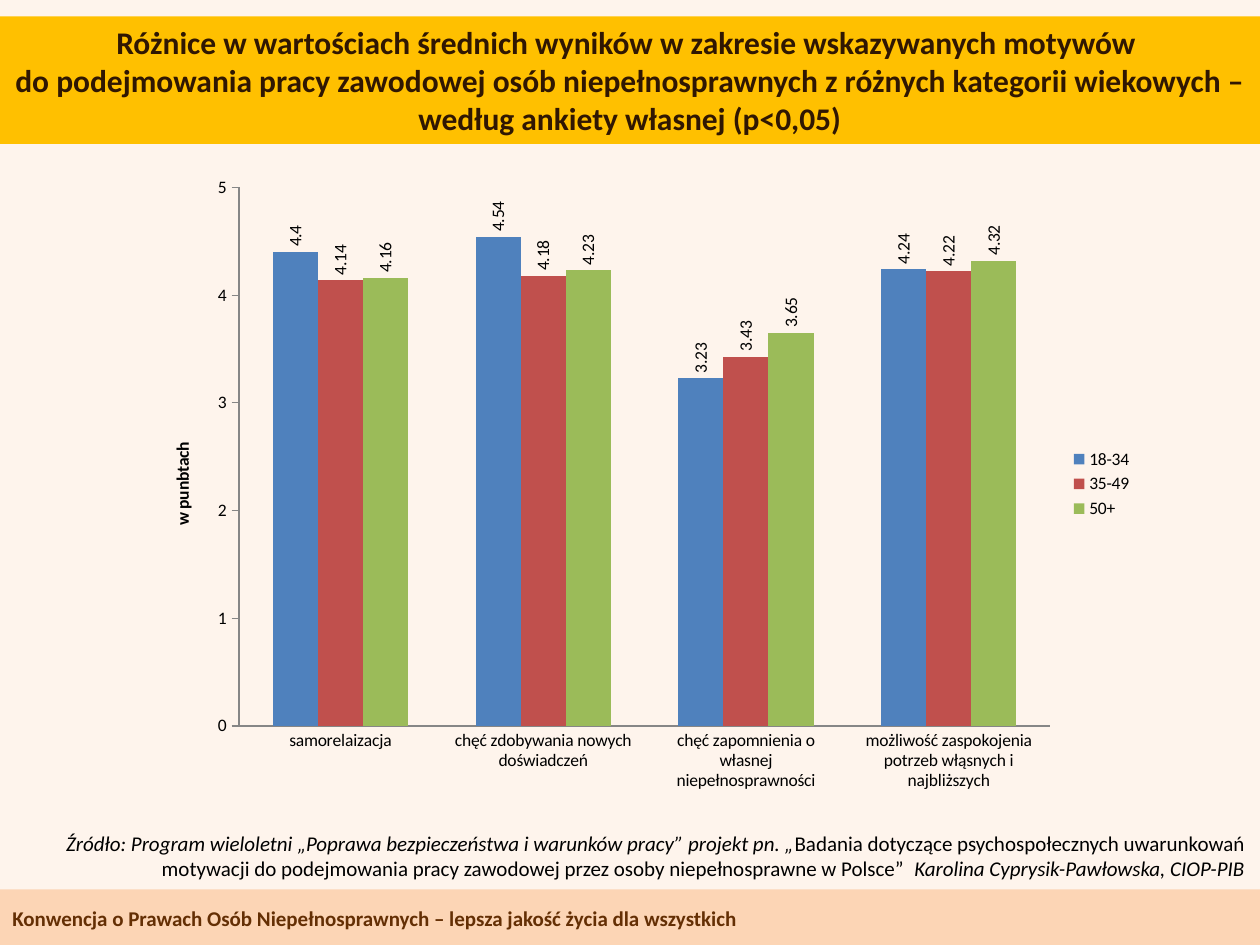
from lxml import etree
from pptx import Presentation
from pptx.chart.data import CategoryChartData
from pptx.dml.color import RGBColor
from pptx.enum.chart import XL_CHART_TYPE as ChartType
from pptx.enum.chart import XL_LABEL_POSITION as LabelPosition
from pptx.enum.chart import XL_LEGEND_POSITION as LegendPosition
from pptx.enum.chart import XL_TICK_MARK as TickMark
from pptx.enum.shapes import MSO_SHAPE as Shape
from pptx.enum.text import MSO_ANCHOR as Anchor
from pptx.enum.text import PP_ALIGN as Align
from pptx.oxml.ns import qn
from pptx.util import Cm, Pt

FONT = "Calibri"
SLIDE_WIDTH = 25.4
COLORS = {
    "background": "FEF4EC",
    "title_band": "FFC000",
    "title_text": "301702",
    "footer_band": "FCD5B5",
    "footer_text": "642F04",
    "text": "000000",
    "axis": "868686",
}

TITLE = (
    "Różnice w wartościach średnich wyników w zakresie wskazywanych motywów \v"
    "do podejmowania pracy zawodowej osób niepełnosprawnych z różnych kategorii "
    "wiekowych – według ankiety własnej (p<0,05)"
)
FOOTER = "Konwencja o Prawach Osób Niepełnosprawnych – lepsza jakość życia dla wszystkich"
SOURCE = [  # text, italic
    ("Źródło: Program wieloletni „Poprawa bezpieczeństwa i warunków pracy” projekt pn. „", True),
    ("Badania dotyczące psychospołecznych uwarunkowań motywacji do podejmowania pracy "
     "zawodowej przez osoby niepełnosprawne w Polsce”", False),
    ("  Karolina Cyprysik-Pawłowska, CIOP-PIB", True),
]
MOTIVES = [
    "samorelaizacja",
    "chęć zdobywania nowych doświadczeń",
    "chęć zapomnienia o własnej niepełnosprawności",
    "możliwość zaspokojenia potrzeb włąsnych i najbliższych",
]
AGE_GROUPS = [  # name, colour, mean scores
    ("18-34", "4F81BD", (4.4, 4.54, 3.23, 4.24)),
    ("35-49", "C0504D", (4.14, 4.18, 3.43, 4.22)),
    ("50+", "9BBB59", (4.16, 4.23, 3.65, 4.32)),
]
PLOT_AREA = {"x": 0.095, "y": 0.035, "w": 0.81, "h": 0.845}


def rgb(name):
    return RGBColor.from_string(COLORS[name])


def set_font(font, size, color, bold=False):
    font.name = FONT
    font.size = Pt(size)
    font.bold = bold
    font.color.rgb = rgb(color)


def add_band(slide, top, height, color):
    band = slide.shapes.add_shape(
        Shape.RECTANGLE, 0, Cm(top), Cm(SLIDE_WIDTH), Cm(height))
    band.shadow.inherit = False
    band.fill.solid()
    band.fill.fore_color.rgb = rgb(color)
    band.line.fill.background()
    return band


def add_text_box(slide, top, width, height):
    box = slide.shapes.add_textbox(0, Cm(top), Cm(width), Cm(height))
    box.text_frame.word_wrap = True
    box.text_frame.vertical_anchor = Anchor.MIDDLE
    return box


def add_title(slide):
    frame = add_band(slide, 0.33, 2.57, "title_band").text_frame
    frame.word_wrap = True
    paragraph = frame.paragraphs[0]
    paragraph.text = TITLE
    paragraph.alignment = Align.CENTER
    set_font(paragraph.font, 18, "title_text", bold=True)


def add_footer(slide):
    add_band(slide, 17.93, 1.12, "footer_band")
    paragraph = add_text_box(slide, 18.11, SLIDE_WIDTH, 0.79).text_frame.paragraphs[0]
    paragraph.text = FOOTER
    set_font(paragraph.font, 12, "footer_text", bold=True)


def add_source(slide):
    paragraph = add_text_box(slide, 16.61, 25.35, 1.27).text_frame.paragraphs[0]
    paragraph.alignment = Align.RIGHT
    for text, italic in SOURCE:
        run = paragraph.add_run()
        run.text = text
        run.font.italic = italic
    set_font(paragraph.font, 12, "text")


def place_plot_area(chart):
    plot_area = chart.element.chart.plotArea
    for old_layout in plot_area.findall(qn("c:layout")):
        plot_area.remove(old_layout)
    layout = etree.Element(qn("c:layout"))
    manual = etree.SubElement(layout, qn("c:manualLayout"))
    settings = {"layoutTarget": "inner", "xMode": "edge", "yMode": "edge", **PLOT_AREA}
    for tag, value in settings.items():
        etree.SubElement(manual, qn(f"c:{tag}"), val=str(value))
    plot_area.insert(0, layout)


def format_axes(chart):
    for axis in (chart.category_axis, chart.value_axis):
        axis.has_major_gridlines = False
        axis.format.line.color.rgb = rgb("axis")
    chart.category_axis.major_tick_mark = TickMark.NONE

    value_axis = chart.value_axis
    value_axis.minimum_scale = 0
    value_axis.maximum_scale = 5
    value_axis.major_unit = 1
    value_axis.major_tick_mark = TickMark.OUTSIDE
    paragraph = value_axis.axis_title.text_frame.paragraphs[0]
    paragraph.text = "w punbtach"
    set_font(paragraph.font, 10, "text", bold=True)


def format_series(series, color):
    series.format.fill.solid()
    series.format.fill.fore_color.rgb = RGBColor.from_string(color)
    labels = series.data_labels
    labels.show_value = True
    labels.position = LabelPosition.OUTSIDE_END
    set_font(labels.font, 10, "text")
    # Turn the labels to read upwards
    body = labels._element.find(qn("c:txPr")).find(qn("a:bodyPr"))
    body.set("rot", "-5400000")
    body.set("vert", "horz")


def add_motives_chart(slide):
    data = CategoryChartData()
    data.categories = MOTIVES
    for name, _, scores in AGE_GROUPS:
        data.add_series(name, scores)
    chart = slide.shapes.add_chart(
        ChartType.COLUMN_CLUSTERED, Cm(2.9), Cm(3.33), Cm(20.19), Cm(12.85), data).chart
    chart.has_title = False
    set_font(chart.font, 10, "text")
    chart.has_legend = True
    chart.legend.position = LegendPosition.RIGHT
    chart.legend.include_in_layout = False

    plot = chart.plots[0]
    plot.gap_width = 150
    plot.overlap = 0
    plot.vary_by_categories = False
    for series, (_, color, _) in zip(plot.series, AGE_GROUPS):
        format_series(series, color)
    format_axes(chart)
    place_plot_area(chart)


def main():
    presentation = Presentation()
    presentation.slide_width = Cm(SLIDE_WIDTH)
    presentation.slide_height = Cm(19.05)
    slide = presentation.slides.add_slide(presentation.slide_layouts[6])
    slide.background.fill.solid()
    slide.background.fill.fore_color.rgb = rgb("background")

    add_footer(slide)
    add_motives_chart(slide)
    add_title(slide)
    add_source(slide)
    presentation.save("out.pptx")


if __name__ == "__main__":
    main()
